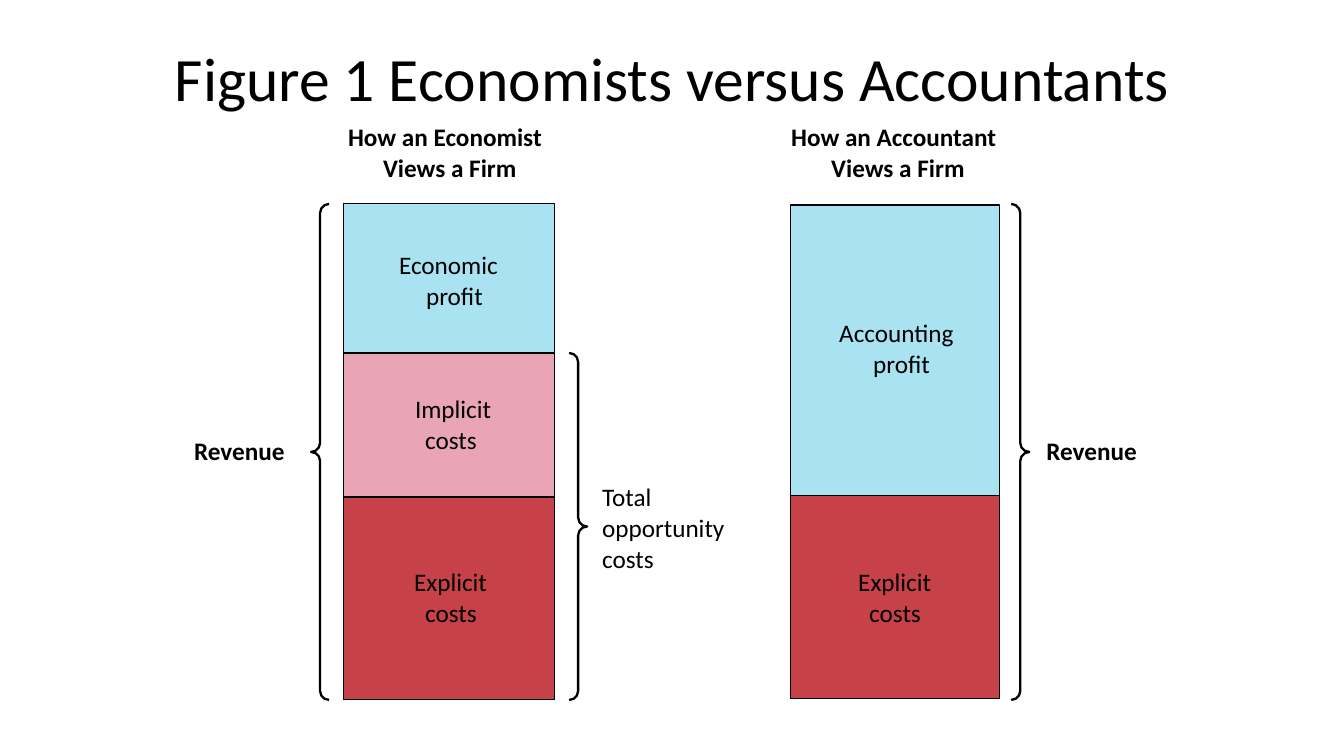
"""Build a slide comparing how economists and accountants view a firm."""
import pptx
import pptx.dml.color
import pptx.enum.shapes
import pptx.enum.text
import pptx.util

SCALE = 914400 / 100.8
FONT = "Calibri"
BLACK, BLUE, PINK, RED = "000000", "A9E2F1", "E9A5B5", "C74149"
LINE_PITCH, LINE_HEIGHT = 31, 30
BRACE_WIDTH = 18

TITLE = "Figure 1 Economists versus Accountants"
TITLE_AREA = (93, 9, 1159, 146)

# left, width, and top, height, colour of each block
BARS = [
    (343, 211, [(204, 149, BLUE), (353, 144, PINK), (497, 203, RED)]),
    (790, 209, [(205, 291, BLUE), (496, 203, RED)]),
]

# side, left, top, height
BRACES = [
    ("LEFT_BRACE", 311, 204, 496),
    ("RIGHT_BRACE", 569, 353, 347),
    ("RIGHT_BRACE", 1011, 204, 496),
]

# top, bold, and text, left, width of each line
LABELS = [
    (121, True, [("How an Economist", 348, 196), ("Views a Firm", 383, 136)]),
    (121, True, [("How an Accountant", 791, 208), ("Views a Firm", 831, 136)]),
    (435, True, [("Revenue", 194, 93)]),
    (435, True, [("Revenue", 1046, 93)]),
    (249, False, [("Economic", 399, 102), ("profit", 426, 60)]),
    (393, False, [("Implicit", 415, 80), ("costs", 425, 54)]),
    (566, False, [("Explicit", 414, 76), ("costs", 425, 54)]),
    (481, False, [("Total", 602, 53), ("opportunity", 602, 127), ("costs", 602, 54)]),
    (317, False, [("Accounting", 839, 118), ("profit", 873, 60)]),
    (566, False, [("Explicit", 858, 76), ("costs", 869, 54)]),
]


def px(*lengths):
    return [pptx.util.Emu(round(length * SCALE)) for length in lengths]


def colour(value):
    return pptx.dml.color.RGBColor.from_string(value)


def assign(target, values):
    for name, value in values.items():
        setattr(target, name, value)


def write(frame, text, size, bold=False):
    para = frame.paragraphs[0]
    span = para.add_run()
    span.text = text
    assign(span.font, {"name": FONT, "size": pptx.util.Pt(size), "bold": bold})
    span.font.color.rgb = colour(BLACK)
    return para


def add_outline(page, kind, area, weight, fill=None):
    preset = getattr(pptx.enum.shapes.MSO_SHAPE, kind)
    shape = page.shapes.add_shape(preset, *px(*area))
    shape.shadow.inherit = False
    shape.line.color.rgb = colour(BLACK)
    shape.line.width = pptx.util.Pt(weight)
    if fill:
        shape.fill.solid()
        shape.fill.fore_color.rgb = colour(fill)
    else:
        shape.fill.background()
    return shape


def add_title(page):
    title = page.shapes.title
    assign(title, dict(zip(("left", "top", "width", "height"), px(*TITLE_AREA))))
    title.text_frame.vertical_anchor = pptx.enum.text.MSO_ANCHOR.MIDDLE
    para = write(title.text_frame, TITLE, 44)
    assign(para, {"alignment": pptx.enum.text.PP_ALIGN.CENTER, "line_spacing": 0.9})


def add_label(page, top, bold, lines):
    for row, (text, left, width) in enumerate(lines):
        area = (left, top + row * LINE_PITCH, width, LINE_HEIGHT)
        frame = page.shapes.add_textbox(*px(*area)).text_frame
        assign(frame, {"margin_left": 0, "margin_top": 0, "margin_right": 0,
                       "margin_bottom": 0, "word_wrap": False,
                       "auto_size": pptx.enum.text.MSO_AUTO_SIZE.SHAPE_TO_FIT_TEXT})
        write(frame, text, 18, bold)


def main():
    deck = pptx.Presentation()
    assign(deck, {"slide_width": pptx.util.Inches(13.33),
                  "slide_height": pptx.util.Inches(7.5)})
    page = deck.slides.add_slide(deck.slide_layouts[5])
    add_title(page)
    for left, width, blocks in BARS:
        for top, height, fill in blocks:
            add_outline(page, "RECTANGLE", (left, top, width, height), 0.75, fill)
    for kind, left, top, height in BRACES:
        brace = add_outline(page, kind, (left, top, BRACE_WIDTH, height), 1.63)
        brace.adjustments[0] = 0.5
    for label in LABELS:
        add_label(page, *label)
    deck.save("out.pptx")


if __name__ == "__main__":
    main()
